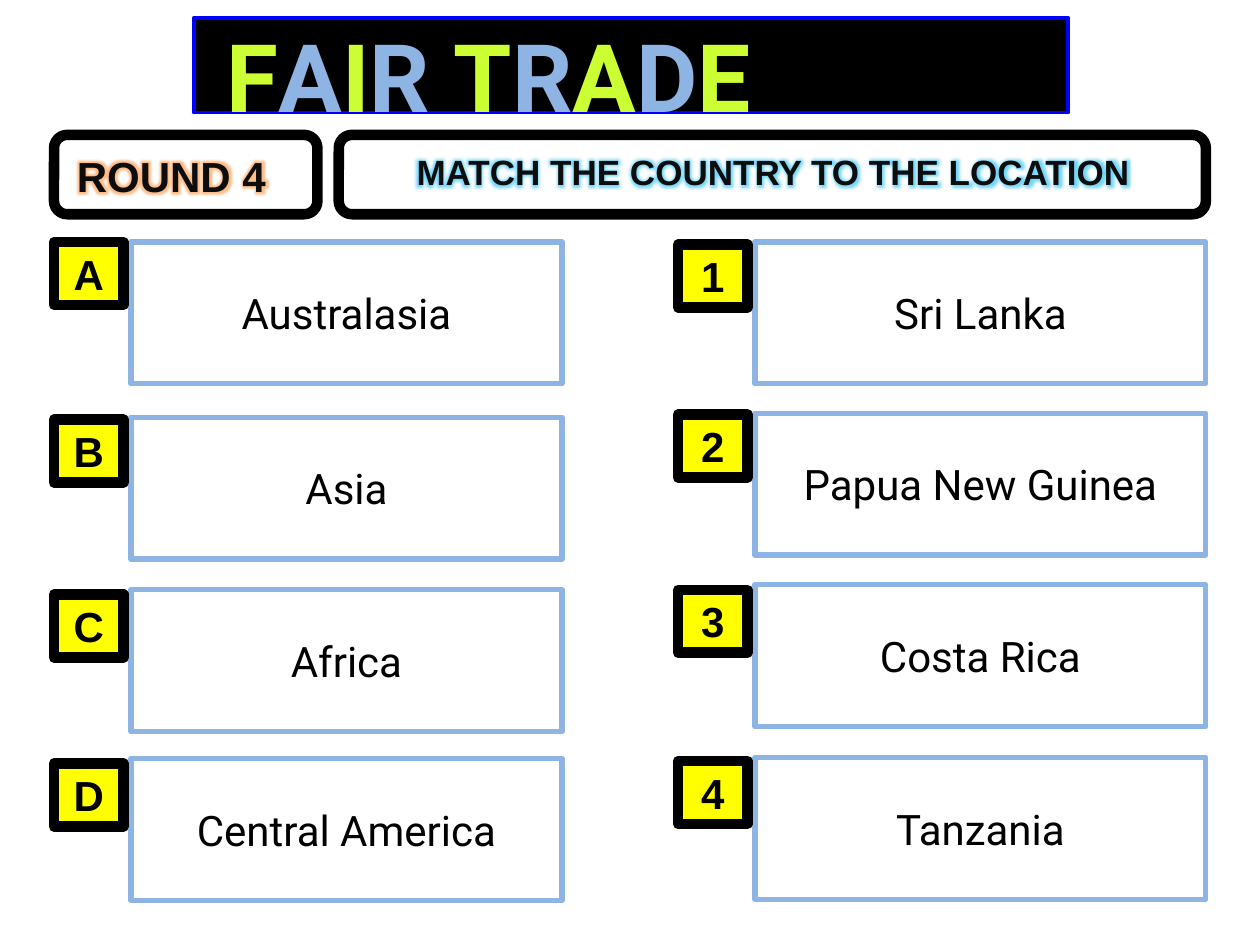
from lxml import etree
from pptx import Presentation
from pptx.dml.color import RGBColor
from pptx.enum.shapes import MSO_SHAPE
from pptx.enum.text import MSO_ANCHOR, MSO_AUTO_SIZE, PP_ALIGN
from pptx.oxml.ns import qn
from pptx.util import Cm, Pt

RECT = MSO_SHAPE.RECTANGLE
ROUND = MSO_SHAPE.ROUNDED_RECTANGLE
TOP = MSO_ANCHOR.TOP
MIDDLE = MSO_ANCHOR.MIDDLE
GROW = MSO_AUTO_SIZE.SHAPE_TO_FIT_TEXT
LEFT = PP_ALIGN.LEFT
CENTER = PP_ALIGN.CENTER

BLACK, WHITE, INK = "000000", "FFFFFF", "0D0D0D"
LIME, SKY, YELLOW, BLUE = "CCFF33", "8EB4E3", "FFFF00", "0000FF"
ORANGE, CYAN = "FF9039", "16BBF8"
TITLE = [("F", LIME), ("A", SKY), ("I", LIME), ("R ", SKY), ("T", LIME),
         ("R", SKY), ("A", LIME), ("D", SKY), ("E", LIME)]
PLACES = [("A", "Australasia", 4.88, 0), ("B", "Asia", 8.41, 0.05),
          ("C", "Africa", 11.89, 0.1), ("D", "Central America", 15.29, 0.1)]
LANDS = [("1", "Sri Lanka", 4.88, 0.05), ("2", "Papua New Guinea", 8.33, 0.03),
         ("3", "Costa Rica", 11.79, 0.1), ("4", "Tanzania", 15.27, 0.07)]


def color(code):
    """Turn a hex string into a colour."""
    return RGBColor.from_string(code)


def panel(slide, kind, box, fill, edge, width):
    """Draw a filled and outlined shape."""
    shape = slide.shapes.add_shape(kind, *map(Cm, box))
    shape.shadow.inherit = False
    shape.fill.solid()
    shape.fill.fore_color.rgb = color(fill)
    shape.line.color.rgb = color(edge)
    shape.line.width = Pt(width)
    return shape


def write(frame, runs, font, size, bold=False, align=CENTER, anchor=TOP):
    """Write coloured runs into one paragraph and return them."""
    frame.word_wrap = True
    frame.vertical_anchor = anchor
    para = frame.paragraphs[0]
    para.alignment = align
    made = []
    for text, code in runs:
        run = para.add_run()
        run.text = text
        run.font.name = font
        run.font.size = Pt(size)
        run.font.bold = bold
        run.font.color.rgb = color(code)
        made.append(run)
    return made


def outline(run, code, width):
    """Give the letters of a run an outline."""
    line = etree.Element(qn("a:ln"), w=str(Pt(width)))
    fill = etree.SubElement(line, qn("a:solidFill"))
    etree.SubElement(fill, qn("a:srgbClr"), val=code)
    run.font._element.insert(0, line)


def glow(run, code):
    """Give the letters of a run a soft glow."""
    effect = etree.Element(qn("a:effectLst"))
    halo = etree.SubElement(effect, qn("a:glow"), rad=str(Pt(8)))
    tint = etree.SubElement(halo, qn("a:srgbClr"), val=code)
    etree.SubElement(tint, qn("a:alpha"), val="60000")
    run.font._element.find(qn("a:solidFill")).addnext(effect)


def banner(slide, x, y, w, h):
    """Place the title bar with its two-coloured letters."""
    panel(slide, RECT, (x, y, w, h), BLACK, BLUE, 2.25)
    box = slide.shapes.add_textbox(Cm(x + 0.41), Cm(y - 0.13), Cm(15.62), Cm(2.57))
    for run in write(box.text_frame, TITLE, "Roboto", 54, True, LEFT):
        outline(run, BLACK, 1.5)
    box.text_frame.auto_size = GROW


def header(slide, x, y, w, h, text, size, halo, align, inset, span):
    """Place a rounded frame with glowing text."""
    panel(slide, ROUND, (x, y, w, h), WHITE, BLACK, 6)
    box = slide.shapes.add_textbox(Cm(x + inset), Cm(y + 0.18), Cm(span), Cm(1.2))
    run, = write(box.text_frame, [(text, INK)], "Arial", size, True, align)
    outline(run, WHITE, 1)
    glow(run, halo)
    box.text_frame.auto_size = GROW


def column(slide, x, w, rows):
    """Place a column of answer cards with their badges."""
    for mark, name, y, drop in rows:
        card = panel(slide, RECT, (x + 1.55, y, w - 1.55, 2.86), WHITE, SKY, 3)
        write(card.text_frame, [(name, BLACK)], "Roboto", 24, anchor=MIDDLE)
        badge = panel(slide, RECT, (x, y + drop, 1.4, 1.27), YELLOW, BLACK, 6)
        write(badge.text_frame, [(mark, BLACK)], "Arial", 24, True)
        badge.text_frame.auto_size = GROW


def main():
    """Build the quiz slide."""
    deck = Presentation()
    deck.slide_width, deck.slide_height = Cm(25.4), Cm(19.05)
    slide = deck.slides.add_slide(deck.slide_layouts[6])
    banner(slide, 3.91, 0.36, 17.63, 1.91)
    header(slide, 6.83, 2.72, 17.48, 1.6, "MATCH THE COUNTRY TO THE LOCATION",
           20, CYAN, CENTER, 0.03, 17.45)
    header(slide, 1.09, 2.72, 5.31, 1.6, "ROUND 4", 24, ORANGE, LEFT, 0.21, 4.6)
    column(slide, 1.09, 10.24, PLACES)
    column(slide, 13.67, 10.64, LANDS)
    deck.save("out.pptx")


if __name__ == "__main__":
    main()
